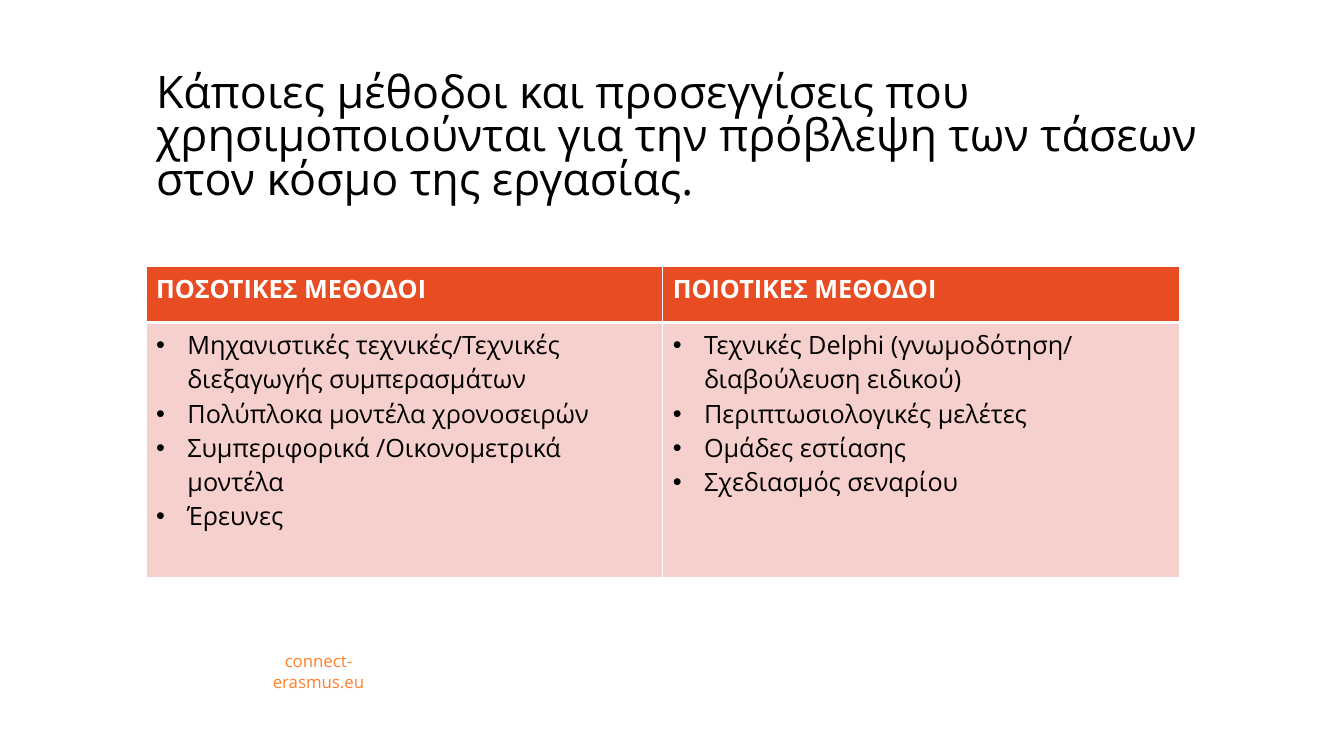
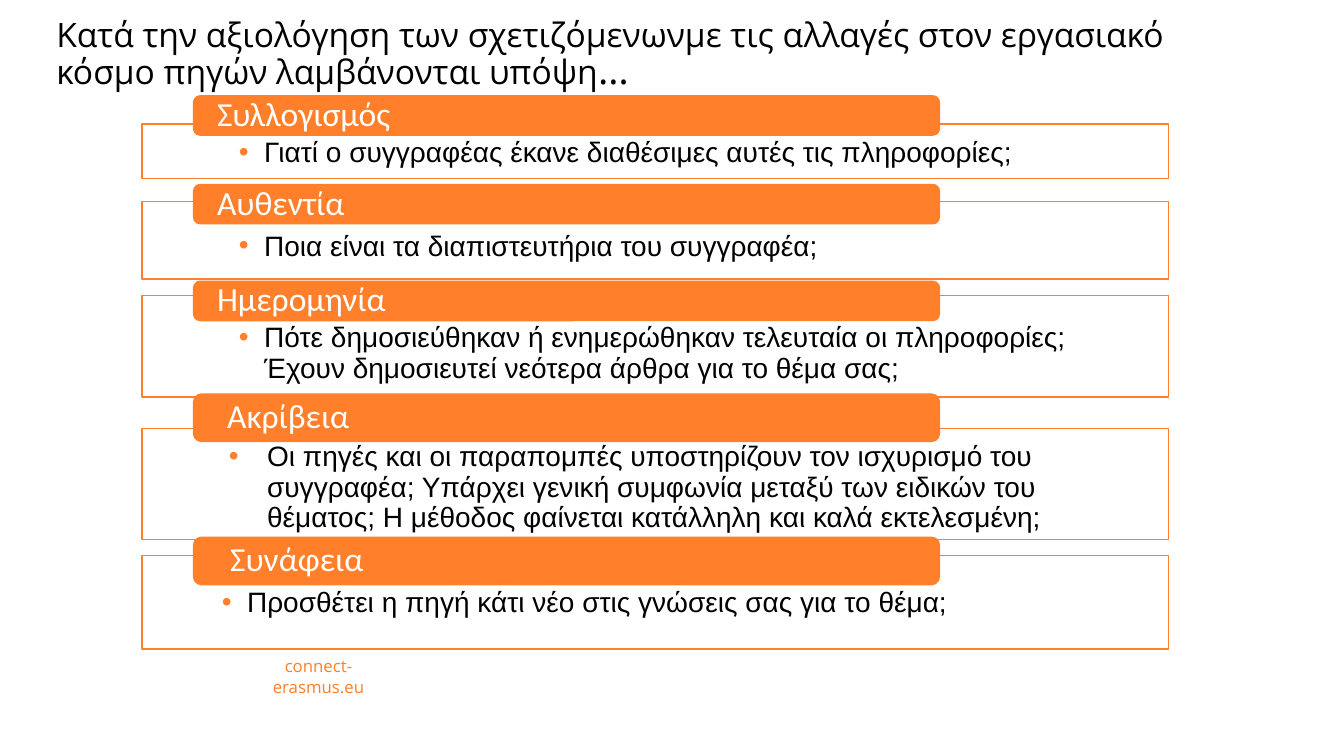
from lxml import etree
from pptx import Presentation
from pptx import util as u
from pptx.dml.color import RGBColor
from pptx.enum import shapes, text
from pptx.oxml.ns import qn

WHITE = RGBColor(0xFF, 0xFF, 0xFF)
BLACK = RGBColor(0x00, 0x00, 0x00)
ORANGE = RGBColor(0xFF, 0x7F, 0x2A)
HEADER_RED = RGBColor(0xE8, 0x4C, 0x22)
BODY_PINK = RGBColor(0xF6, 0xD0, 0xCD)

WIDTH, HEIGHT = u.Inches(13.33), u.Inches(7.5)

TITLE = dict(name="Open Sans", size=u.Pt(32), color=BLACK)
SMALL_TITLE = dict(TITLE, size=u.Pt(24))
ELLIPSIS = dict(TITLE, size=u.Pt(28))
FOOTER = dict(name="Open Sans", size=u.Pt(12), color=ORANGE)
TABLE_HEAD = dict(name="Open Sans", size=u.Pt(18), color=WHITE, bold=True)
TABLE_BODY = dict(TABLE_HEAD, color=BLACK, bold=False)
TAB_LABEL = dict(name="Calibri", size=u.Pt(24), color=WHITE)
QUESTION = dict(name="Arial", size=u.Pt(20), color=BLACK)

METHODS = {
    "ΠΟΣΟΤΙΚΕΣ ΜΕΘΟΔΟΙ": [
        "Μηχανιστικές τεχνικές/Τεχνικές διεξαγωγής συμπερασμάτων",
        "Πολύπλοκα μοντέλα χρονοσειρών",
        "Συμπεριφορικά /Οικονομετρικά μοντέλα",
        "Έρευνες",
    ],
    "ΠΟΙΟΤΙΚΕΣ ΜΕΘΟΔΟΙ": [
        "Τεχνικές Delphi (γνωμοδότηση/ διαβούλευση ειδικού)",
        "Περιπτωσιολογικές μελέτες",
        "Ομάδες εστίασης",
        "Σχεδιασμός σεναρίου",
    ],
}

# Label, question, then percentages of the slide:
# panel top and height, tab top and height, label inset, question inset and drop;
# the hanging indent comes last, in inches.
CRITERIA = [
    ("Συλλογισμός",
     "Γιατί ο συγγραφέας έκανε διαθέσιμες αυτές τις πληροφορίες;",
     16.4, 7.2, 12.67, 5.2, 1.6, 7.2, 1.87, 0.25),
    ("Αυθεντία",
     "Ποια είναι τα διαπιστευτήρια του συγγραφέα;",
     26.67, 10.27, 24.4, 5.2, 1.6, 7.2, 4, 0.25),
    ("Ημερομηνία",
     "Πότε δημοσιεύθηκαν ή ενημερώθηκαν τελευταία οι πληροφορίες; "
     "Έχουν δημοσιευτεί νεότερα άρθρα για το θέμα σας;",
     39.07, 13.47, 37.2, 5.2, 1.6, 7.2, 3.73, 0.25),
    ("Ακρίβεια",
     "Οι πηγές και οι παραπομπές υποστηρίζουν τον ισχυρισμό του συγγραφέα; "
     "Υπάρχει γενική συμφωνία μεταξύ των ειδικών του θέματος; "
     "Η μέθοδος φαίνεται κατάλληλη και καλά εκτελεσμένη;",
     56.67, 14.67, 52.13, 6.27, 2.32, 6.45, 1.87, 0.38),
    ("Συνάφεια",
     "Προσθέτει η πηγή κάτι νέο στις γνώσεις σας για το θέμα;",
     73.47, 12.4, 71.07, 6.27, 2.55, 5.93, 4.4, 0.25),
]


def across(percent):
    return round(WIDTH * percent / 100)


def down(percent):
    return round(HEIGHT * percent / 100)


def area(left, top, width, height):
    """Turn percentages of the slide into a position and a size."""
    return across(left), down(top), across(width), down(height)


def add_run(paragraph, words, style):
    run = paragraph.add_run()
    run.text = words
    for attribute, value in style.items():
        if attribute == "color":
            run.font.color.rgb = value
        else:
            setattr(run.font, attribute, value)


def add_bullet(paragraph, indent, color):
    properties = paragraph._p.get_or_add_pPr()
    properties.set("marL", str(u.Inches(indent)))
    properties.set("indent", str(-u.Inches(indent)))
    bullet_color = etree.SubElement(properties, qn("a:buClr"))
    etree.SubElement(bullet_color, qn("a:srgbClr"), val=str(color))
    etree.SubElement(properties, qn("a:buFont"), typeface="Arial")
    etree.SubElement(properties, qn("a:buChar"), char="•")


def add_text(slide, place, anchor, runs, **paragraph_format):
    frame = slide.shapes.add_textbox(*place).text_frame
    frame.word_wrap = True
    frame.vertical_anchor = anchor
    paragraph = frame.paragraphs[0]
    for attribute, value in paragraph_format.items():
        setattr(paragraph, attribute, value)
    for words, style in runs:
        add_run(paragraph, words, style)


def add_title(slide, left, top, runs):
    add_text(slide, area(left, top, 86.25, 11.33), text.MSO_ANCHOR.BOTTOM,
             runs, line_spacing=0.8)


def add_footer(slide, top):
    add_text(slide, area(17.15, top, 13.1, 4), text.MSO_ANCHOR.MIDDLE,
             [("connect-erasmus.eu", FOOTER)], alignment=text.PP_ALIGN.CENTER)


def add_outlined(slide, kind, place, fill, anchor, insets):
    """Add an orange-edged shape; return it with its first paragraph."""
    shape = slide.shapes.add_shape(kind, *place)
    shape.shadow.inherit = False
    shape.fill.solid()
    shape.fill.fore_color.rgb = fill
    shape.line.color.rgb = ORANGE
    shape.line.width = u.Pt(1)
    frame = shape.text_frame
    frame.word_wrap = True
    frame.vertical_anchor = anchor
    for side, inset in zip(("left", "top", "right", "bottom"), insets):
        setattr(frame, f"margin_{side}", inset)
    paragraph = frame.paragraphs[0]
    paragraph.alignment = text.PP_ALIGN.LEFT
    return shape, paragraph


def add_criterion(slide, label, question, top, height, tab_top, tab_height,
                  label_inset, question_inset, drop, indent):
    _, body = add_outlined(
        slide, shapes.MSO_SHAPE.RECTANGLE, area(10.58, top, 76.37, height), WHITE,
        text.MSO_ANCHOR.TOP, (across(question_inset), down(drop), across(7.2), 0))
    add_bullet(body, indent, ORANGE)
    body.line_spacing = 0.9
    add_run(body, question, QUESTION)

    tab, heading = add_outlined(
        slide, shapes.MSO_SHAPE.ROUNDED_RECTANGLE,
        area(14.4, tab_top, 55.5, tab_height), ORANGE,
        text.MSO_ANCHOR.MIDDLE, (across(label_inset), 0, across(2.5), 0))
    tab.adjustments[0] = 0.17
    heading.line_spacing = 0.9
    add_run(heading, label, TAB_LABEL)


def style_cell(cell, fill, bottom_width=1, top_width=1):
    """Give a cell white borders and a fill."""
    properties = cell._tc.get_or_add_tcPr()
    for side, width in zip("LRTB", (1, 1, top_width, bottom_width)):
        border = etree.SubElement(properties, qn(f"a:ln{side}"), w=str(u.Pt(width)))
        solid = etree.SubElement(border, qn("a:solidFill"))
        etree.SubElement(solid, qn("a:srgbClr"), val=str(WHITE))
    cell.fill.solid()
    cell.fill.fore_color.rgb = fill


def add_methods_table(slide):
    row_shares = (7.47, 33.73)
    table = slide.shapes.add_table(
        len(row_shares), len(METHODS),
        *area(10.87, 35.2, 76.88, sum(row_shares))).table
    for row, share in zip(table.rows, row_shares):
        row.height = down(share)
    for column, (heading, methods) in enumerate(METHODS.items()):
        head, body = table.cell(0, column), table.cell(1, column)
        style_cell(head, HEADER_RED, bottom_width=3)
        style_cell(body, BODY_PINK, top_width=3)
        add_run(head.text_frame.paragraphs[0], heading, TABLE_HEAD)
        frame = body.text_frame
        for index, method in enumerate(methods):
            paragraph = frame.add_paragraph() if index else frame.paragraphs[0]
            add_bullet(paragraph, 0.31, BLACK)
            add_run(paragraph, method, TABLE_BODY)


def build_methods(slide):
    add_title(slide, 10.87, 16.27, [
        ("Κάποιες μέθοδοι και προσεγγίσεις που χρησιμοποιούνται για την "
         "πρόβλεψη των τάσεων στον κόσμο της εργασίας.", TITLE)])
    add_methods_table(slide)
    add_footer(slide, 86.8)


def build_criteria(slide):
    add_title(slide, 3.45, 1.47, [
        ("Κατά την αξιολόγηση των σχετιζόμενωνμε τις αλλαγές στον εργασιακό "
         "κόσμο πηγών λαμβάνονται υπόψη", SMALL_TITLE),
        ("…", ELLIPSIS)])
    for criterion in CRITERIA:
        add_criterion(slide, *criterion)
    add_footer(slide, 87.47)


def main():
    deck = Presentation()
    deck.slide_width, deck.slide_height = WIDTH, HEIGHT
    blank = deck.slide_layouts[6]
    for build in (build_methods, build_criteria):
        build(deck.slides.add_slide(blank))
    deck.save("out.pptx")


if __name__ == "__main__":
    main()
